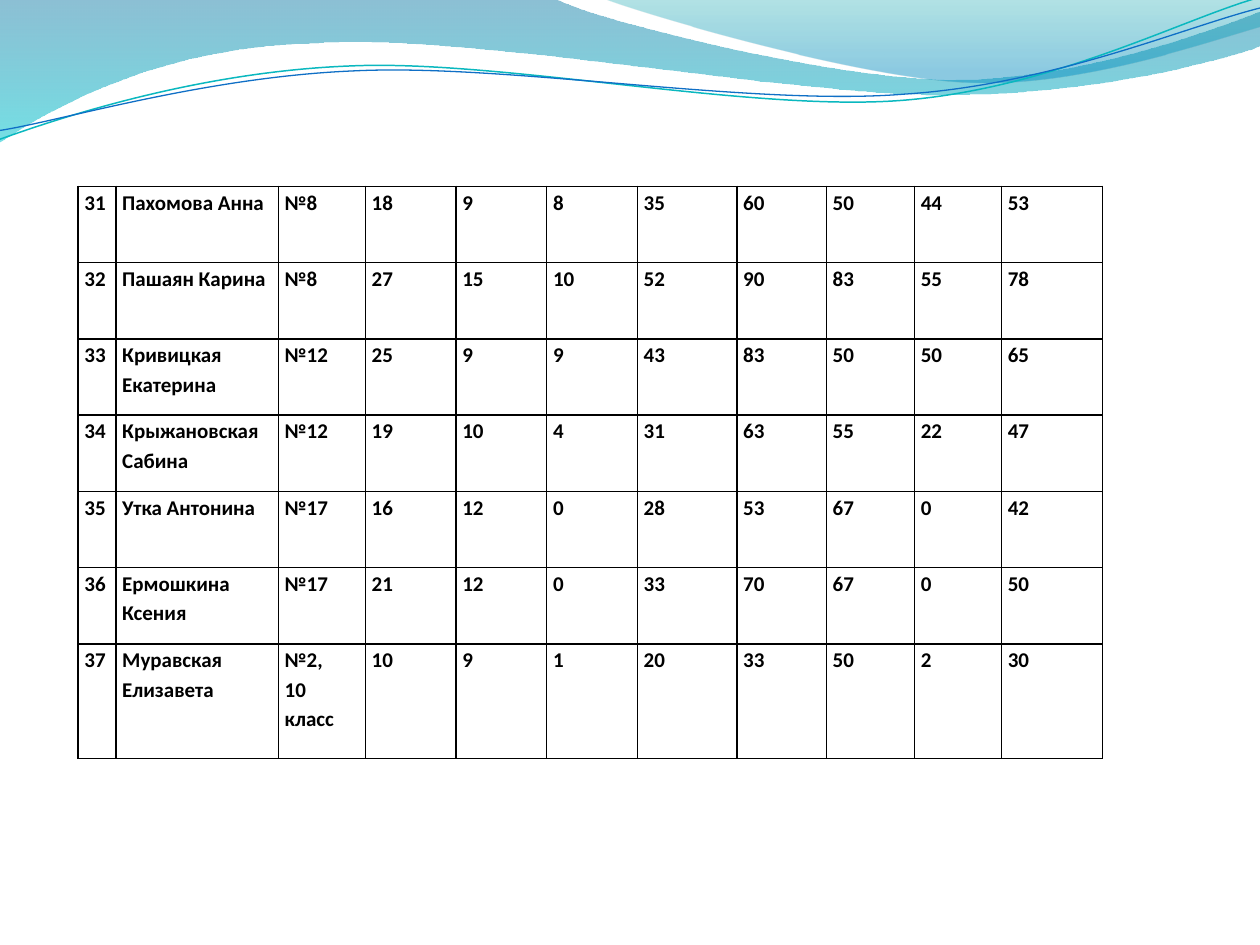
from lxml.etree import SubElement
from pptx import Presentation
from pptx.dml.color import RGBColor
from pptx.oxml.ns import qn
from pptx.util import Inches, Pt

SLIDE_WIDTH, SLIDE_HEIGHT = 10, 7.5

# Outlines in inches: one point is a straight step, three points are a cubic curve
BACK_WAVE = [
    [(0, 0)], [(4.4, -0.01)],
    [(4.76, 0.17), (6.64, 0.63), (7.58, 0.63)],
    [(8.53, 0.63), (9.58, 0.26), (10, 0.09)],
    [(10.01, 0.36)],
    [(9.83, 0.44), (8.7, 0.76), (7.46, 0.75)],
    [(6.22, 0.75), (3.82, 0.28), (2.57, 0.34)],
    [(1.29, 0.36), (0.46, 0.83), (-0.01, 1.13)],
    [(0, 0)],
]
FRONT_WAVE = [
    [(4.79, -0.01)],
    [(5.09, 0.11), (6.82, 0.62), (7.69, 0.65)],
    [(8.56, 0.69), (9.61, 0.32), (10, 0.21)],
    [(10, 0)], [(4.79, -0.01)],
]
# The two lines are given level and then turned by LINE_ROTATION
LINE_ROTATION = 357.3
TEAL_LINE = [
    [(-0.02, 0.87)],
    [(0.47, 0.72), (1.58, 0.41), (2.78, 0.42)],
    [(3.96, 0.42), (5.91, 0.93), (7.12, 0.9)],
    [(8.32, 0.87), (9.4, 0.36), (10, 0.22)],
]
BLUE_LINE = [
    [(-0.02, 0.8)],
    [(0.46, 0.75), (1.64, 0.45), (2.83, 0.46)],
    [(4.03, 0.46), (5.96, 0.89), (7.16, 0.85)],
    [(8.35, 0.83), (9.42, 0.42), (10.02, 0.3)],
]

# Results table
TABLE_LEFT, TABLE_TOP = 0.62, 1.48
COLUMN_WIDTHS = [0.3, 1.29, 0.69, 0.72, 0.72, 0.72, 0.79, 0.71, 0.7, 0.69, 0.8]
TABLE_HEIGHT = 4.54
ROW_SHARES = [1] * 6 + [1.5]
RESULTS = [
    (31, "Пахомова Анна", "№8", 18, 9, 8, 35, 60, 50, 44, 53),
    (32, "Пашаян Карина", "№8", 27, 15, 10, 52, 90, 83, 55, 78),
    (33, "Кривицкая Екатерина", "№12", 25, 9, 9, 43, 83, 50, 50, 65),
    (34, "Крыжановская Сабина", "№12", 19, 10, 4, 31, 63, 55, 22, 47),
    (35, "Утка Антонина", "№17", 16, 12, 0, 28, 53, 67, 0, 42),
    (36, "Ермошкина Ксения", "№17", 21, 12, 0, 33, 70, 67, 0, 50),
    (37, "Муравская Елизавета", "№2,\n10 класс", 10, 9, 1, 20, 33, 50, 2, 30),
]


def color(hex_text):
    return RGBColor.from_string(hex_text)


def add_outline(slide, outline, closed):
    points = [(Inches(x), Inches(y)) for step in outline for x, y in step]
    builder = slide.shapes.build_freeform(*points[0])
    builder.add_line_segments(points[1:], close=closed)
    shape = builder.convert_to_shape()
    shape.shadow.inherit = False

    # Join each run of three points into one cubic curve
    segments = iter(list(shape._element.iter(qn("a:lnTo"))))
    for step in outline[1:]:
        first, *others = [next(segments) for _ in step]
        if others:
            first.tag = qn("a:cubicBezTo")
        for segment in others:
            first.append(segment[0])
            segment.getparent().remove(segment)
    return shape


def add_wave(slide, outline, stops):
    """Filled wave; each stop is position, colour and opacity in percent."""
    shape = add_outline(slide, outline, closed=True)
    shape.line.fill.background()
    shape.fill.gradient()
    shape.fill.gradient_angle = 270
    for gradient_stop, (position, hex_text, _) in zip(shape.fill.gradient_stops, stops):
        gradient_stop.position = position
        gradient_stop.color.rgb = color(hex_text)
    stop_colors = shape._element.spPr.iter(qn("a:srgbClr"))
    for element, (_, _, opacity) in zip(list(stop_colors), stops):
        SubElement(element, qn("a:alpha"), val=str(opacity * 1000))


def add_wave_line(slide, outline, hex_text, width):
    shape = add_outline(slide, outline, closed=False)
    shape.rotation = LINE_ROTATION
    shape.fill.background()
    shape.line.color.rgb = color(hex_text)
    shape.line.width = Pt(width)


def add_borders(cell, hex_text, width):
    properties = cell._tc.get_or_add_tcPr()
    for index, side in enumerate(("a:lnL", "a:lnR", "a:lnT", "a:lnB")):
        border = SubElement(properties, qn(side), w=str(Pt(width)))
        fill = SubElement(border, qn("a:solidFill"))
        SubElement(fill, qn("a:srgbClr"), val=hex_text)
        properties.insert(index, border)


def fill_cell(cell, value):
    cell.margin_left = cell.margin_right = Inches(0.05)
    cell.margin_top = cell.margin_bottom = 0
    cell.fill.background()
    add_borders(cell, "000000", 1)
    cell.text_frame.text = str(value)
    for paragraph in cell.text_frame.paragraphs:
        paragraph.line_spacing = 1.15
        for run in paragraph.runs:
            run.font.name = "Calibri"
            run.font.size = Pt(12)
            run.font.bold = True
            run.font.color.rgb = color("000000")


def add_results_table(slide):
    table = slide.shapes.add_table(
        len(RESULTS), len(COLUMN_WIDTHS), Inches(TABLE_LEFT), Inches(TABLE_TOP),
        Inches(sum(COLUMN_WIDTHS)), Inches(TABLE_HEIGHT)).table
    table.first_row = table.horz_banding = False
    for column, width in zip(table.columns, COLUMN_WIDTHS):
        column.width = Inches(width)
    for row, share, values in zip(table.rows, ROW_SHARES, RESULTS):
        row.height = Inches(TABLE_HEIGHT * share / sum(ROW_SHARES))
        for cell, value in zip(row.cells, values):
            fill_cell(cell, value)


def main():
    presentation = Presentation()
    presentation.slide_width = Inches(SLIDE_WIDTH)
    presentation.slide_height = Inches(SLIDE_HEIGHT)
    slide = presentation.slides.add_slide(presentation.slide_layouts[6])

    # Waves along the top edge
    add_wave(slide, BACK_WAVE, [(0, "0074A1", 45), (1, "00C6CF", 55)])
    add_wave(slide, FRONT_WAVE, [(0, "00A1A9", 30), (0.8, "008BBF", 45)])
    add_wave_line(slide, TEAL_LINE, "0AB8BF", 0.85)
    add_wave_line(slide, BLUE_LINE, "0F6FC6", 0.75)

    # Results of the pupils
    add_results_table(slide)
    presentation.save("out.pptx")


if __name__ == "__main__":
    main()
